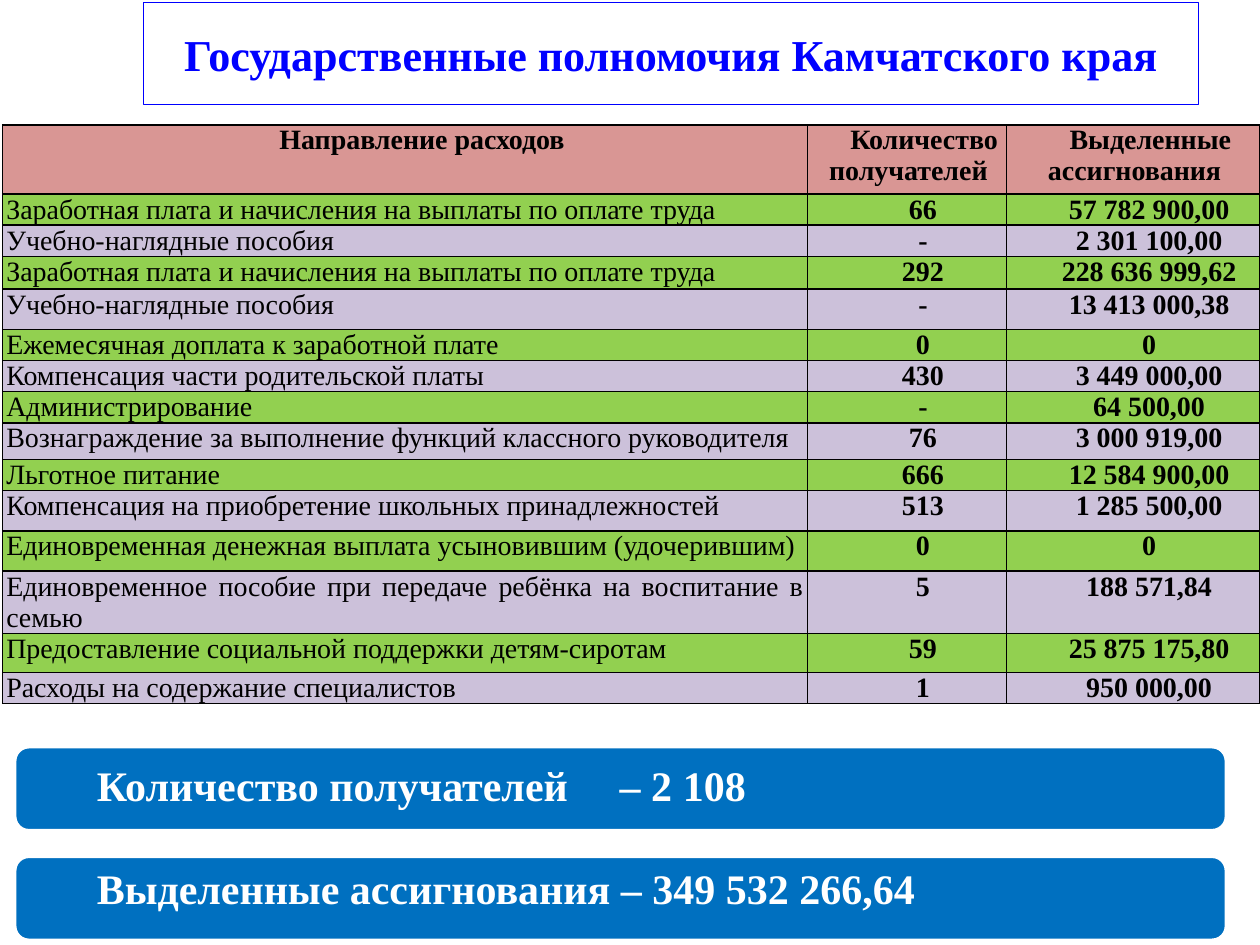
from pptx import Presentation
from pptx.dml.color import RGBColor
from pptx.enum import shapes, text
from pptx.oxml import parse_xml
from pptx.oxml.ns import nsdecls
from pptx.util import Inches, Pt

FONT = "Times New Roman"
BLACK = RGBColor(0x00, 0x00, 0x00)
WHITE = RGBColor(0xFF, 0xFF, 0xFF)
BLUE = RGBColor(0x00, 0x00, 0xFF)
PANEL_BLUE = RGBColor(0x00, 0x70, 0xC0)
HEADER_PINK = RGBColor(0xD9, 0x96, 0x94)
ROW_GREEN = RGBColor(0x92, 0xD0, 0x50)
ROW_LILAC = RGBColor(0xCC, 0xC1, 0xDA)

# Content
TITLE = "Государственные полномочия Камчатского края"
HEADER = ("Направление расходов", "Количество получателей", "Выделенные ассигнования")
EXPENSES = [  # purpose, recipients, allocation, row height
    ("Заработная плата и начисления на выплаты по оплате труда", "66", "57 782 900,00", 0.24),
    ("Учебно-наглядные пособия", "-", "2 301 100,00", 0.24),
    ("Заработная плата и начисления на выплаты по оплате труда", "292", "228 636 999,62", 0.26),
    ("Учебно-наглядные пособия", "-", "13 413 000,38", 0.32),
    ("Ежемесячная доплата к заработной плате", "0", "0", 0.24),
    ("Компенсация части родительской платы", "430", "3 449 000,00", 0.24),
    ("Администрирование", "-", "64 500,00", 0.24),
    ("Вознаграждение за выполнение функций классного руководителя", "76", "3 000 919,00", 0.29),
    ("Льготное питание", "666", "12 584 900,00", 0.24),
    ("Компенсация на приобретение школьных принадлежностей", "513", "1 285 500,00", 0.32),
    ("Единовременная денежная выплата усыновившим (удочерившим)", "0", "0", 0.32),
    ("Единовременное пособие при передаче ребёнка на воспитание в семью", "5", "188 571,84", 0.49),
    ("Предоставление социальной поддержки детям-сиротам", "59", "25 875 175,80", 0.31),
    ("Расходы на содержание специалистов", "1", "950 000,00", 0.24),
]
TOTALS = [  # wording, panel top, text top, text width
    ("Количество получателей\t– 2 108", 5.93, 5.98, 6.61),
    ("Выделенные ассигнования – 349 532 266,64", 6.80, 6.80, 7.56),
]
COLUMN_WIDTHS = (6.39, 1.58, 2.01)
HEADER_HEIGHT = 0.55
TAB_STOP = 4.15


def style_font(paragraph, size, color, bold=True):
    font = paragraph.font
    font.name, font.size, font.bold = FONT, Pt(size), bold
    font.color.rgb = color


def add_panel(slide, preset, box, fill, line, width):
    shape = slide.shapes.add_shape(preset, *map(Inches, box))
    shape.shadow.inherit = False
    shape.fill.solid()
    shape.fill.fore_color.rgb = fill
    shape.line.color.rgb = line
    shape.line.width = Pt(width)
    return shape


def fill_cell(cell, wording, fill, is_header, is_purpose):
    cell.margin_left = cell.margin_right = Inches(0.03)
    cell.margin_top = cell.margin_bottom = 0
    cell.text = wording
    paragraph = cell.text_frame.paragraphs[0]
    if is_purpose and not is_header:
        paragraph.alignment = text.PP_ALIGN.JUSTIFY
    else:
        paragraph.alignment = text.PP_ALIGN.CENTER
        properties = paragraph._p.get_or_add_pPr()
        properties.set("marL", str(Inches(0.02 if is_header else 0)))
        properties.set("indent", str(Inches(0.25)))
    style_font(paragraph, 16, BLACK, bold=is_header or not is_purpose)
    # Borders come before the fill in the cell properties
    for side in ("lnL", "lnR", "lnT", "lnB"):
        cell._tc.get_or_add_tcPr().append(parse_xml(
            f'<a:{side} {nsdecls("a")} w="{Pt(1)}"><a:solidFill>'
            f'<a:srgbClr val="{BLACK}"/></a:solidFill></a:{side}>'))
    cell.fill.solid()
    cell.fill.fore_color.rgb = fill


def add_expense_table(slide):
    heights = [HEADER_HEIGHT] + [expense[3] for expense in EXPENSES]
    rows = [HEADER] + [expense[:3] for expense in EXPENSES]
    table = slide.shapes.add_table(
        len(rows), len(HEADER), Inches(0.02), Inches(0.99),
        Inches(sum(COLUMN_WIDTHS)), Inches(sum(heights))).table
    for column, width in zip(table.columns, COLUMN_WIDTHS):
        column.width = Inches(width)
    for index, (row, height) in enumerate(zip(rows, heights)):
        table.rows[index].height = Inches(height)
        fill = HEADER_PINK if index == 0 else (ROW_LILAC, ROW_GREEN)[index % 2]
        for position, wording in enumerate(row):
            fill_cell(table.cell(index, position), wording, fill, index == 0, position == 0)


def add_total(slide, wording, panel_top, text_top, text_width):
    add_panel(slide, shapes.MSO_SHAPE.ROUNDED_RECTANGLE,
              (0.12, panel_top, 9.61, 0.66), PANEL_BLUE, WHITE, 1.5)
    box = slide.shapes.add_textbox(*map(Inches, (0.67, text_top, text_width, 0.5)))
    box.text_frame.word_wrap = True
    paragraph = box.text_frame.paragraphs[0]
    paragraph.text = wording
    if "\t" in wording:
        paragraph._p.get_or_add_pPr().append(parse_xml(
            f'<a:tabLst {nsdecls("a")}><a:tab pos="{Inches(TAB_STOP)}" algn="l"/></a:tabLst>'))
    style_font(paragraph, 24, WHITE)


def main():
    presentation = Presentation()
    presentation.slide_width, presentation.slide_height = Inches(10), Inches(7.5)
    slide = presentation.slides.add_slide(presentation.slide_layouts[6])

    # Title
    title = add_panel(slide, shapes.MSO_SHAPE.RECTANGLE,
                      (1.14, 0.02, 8.37, 0.81), WHITE, BLUE, 0.75)
    title.text_frame.word_wrap = True
    title.text_frame.vertical_anchor = text.MSO_ANCHOR.MIDDLE
    paragraph = title.text_frame.paragraphs[0]
    paragraph.text = TITLE
    paragraph.alignment = text.PP_ALIGN.CENTER
    style_font(paragraph, 25.2, BLUE)

    # Expenses and totals
    add_expense_table(slide)
    for total in TOTALS:
        add_total(slide, *total)

    presentation.save("out.pptx")


if __name__ == "__main__":
    main()
